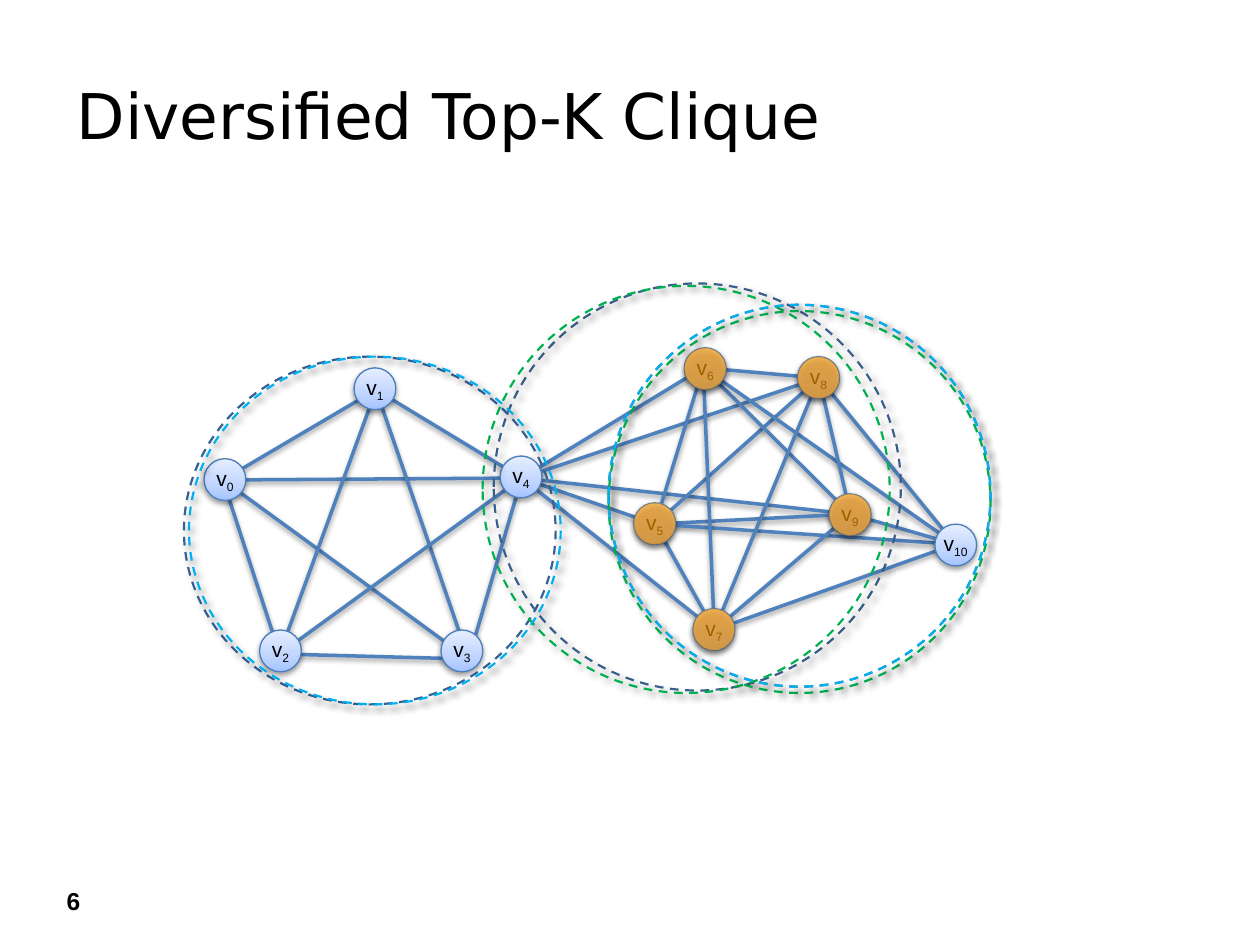
from copy import deepcopy
from itertools import combinations

from lxml.etree import SubElement
from pptx import Presentation
from pptx.dml.color import RGBColor
from pptx.enum.dml import MSO_LINE
from pptx.enum.shapes import MSO_CONNECTOR, MSO_SHAPE
from pptx.enum.text import MSO_ANCHOR, PP_ALIGN
from pptx.oxml.ns import qn
from pptx.util import Pt

BLACK = RGBColor(0x00, 0x00, 0x00)
EDGE_BLUE = RGBColor(0x4F, 0x81, 0xBD)
RIM_BLUE = RGBColor(0x4B, 0x7E, 0xBC)
NAVY = RGBColor(0x37, 0x60, 0x92)
SLATE = RGBColor(0x3A, 0x5F, 0x8C)
GREEN = RGBColor(0x00, 0xB0, 0x50)
CYAN = RGBColor(0x00, 0xB0, 0xF0)
ORANGE = RGBColor(0xFF, 0x99, 0x00)
VERTEX_SHADES = [
    (0, RGBColor(0xA4, 0xC4, 0xFF)),
    (0.35, RGBColor(0xBF, 0xD4, 0xFF)),
    (1, RGBColor(0xE6, 0xEE, 0xFF)),
]

# Blur, distance, direction in degrees, opacity in percent
SOFT_SHADOW = (3.1, 1.6, 90, 38)
RING_SHADOW = (4, 3, 45, 40)
DIAMETER = 23.9

# Vertex number: left and top of its disc, then the point where its edges meet
VERTICES = {
    0: (116.6, 262.1, 127.4, 274.3),
    1: (202.3, 210.2, 214.9, 222.8),
    2: (148.3, 360, 159.8, 373.7),
    3: (252, 360, 267.8, 376.6),
    4: (285.8, 260.6, 298.1, 273.2),
    5: (362.2, 287.3, 374.4, 299.5),
    6: (391, 198.7, 401.8, 210.2),
    7: (396, 347.8, 408.2, 360),
    8: (455.8, 203.8, 468, 216),
    9: (473.8, 282.2, 486, 293.8),
    10: (534.2, 299.5, 545.8, 311),
}
CLIQUES = [range(0, 5), range(4, 10), range(5, 11)]
COVERED = range(5, 10)

# Dashed rings around the cliques: left, top, width, height, colour
RINGS = [
    (105.1, 203.8, 212.4, 198.7, NAVY),
    (282.2, 162, 232.6, 232.6, SLATE),
    (347.8, 174.2, 218.2, 218.2, SLATE),
    (275.8, 163.4, 232.6, 232.6, GREEN),
    (347.8, 177.8, 218.2, 218.2, GREEN),
    (108, 203.8, 212.4, 198.7, CYAN),
    (347.8, 174.2, 218.2, 218.2, CYAN),
]


def cast_shadow(part, blur, distance, direction, opacity):
    effects = SubElement(part._element.spPr, qn("a:effectLst"))
    outer = SubElement(effects, qn("a:outerShdw"), blurRad=str(Pt(blur)),
                       dist=str(Pt(distance)), dir=str(direction * 60000),
                       rotWithShape="0")
    colour = SubElement(outer, qn("a:srgbClr"), val=str(BLACK))
    SubElement(colour, qn("a:alpha"), val=str(opacity * 1000))


def add_label(left, top, width, height, text, size, font, bold=False):
    box = slide.shapes.add_textbox(Pt(left), Pt(top), Pt(width), Pt(height))
    box.text_frame.word_wrap = True
    run = box.text_frame.paragraphs[0].add_run()
    run.text = text
    run.font.size, run.font.name, run.font.bold = Pt(size), font, bold
    run.font.color.rgb = BLACK
    return box


deck = Presentation()
deck.slide_width, deck.slide_height = Pt(720), Pt(540)
slide = deck.slides.add_slide(deck.slide_layouts[6])

# Page number and title
add_label(31, 502.6, 34, 24.5, "6", 14, "Arial", bold=True)
title = add_label(36.7, 36.7, 720, 62.6, "Diversified Top-K Clique", 36, "DejaVu Sans")
title.text_frame.margin_top = Pt(7)

# Edges: every pair inside a clique, each drawn once
pairs = {pair for clique in CLIQUES for pair in combinations(clique, 2)}
for start, end in sorted(pairs):
    ends = VERTICES[start][2:] + VERTICES[end][2:]
    edge = slide.shapes.add_connector(MSO_CONNECTOR.STRAIGHT, *map(Pt, ends))
    edge.line.color.rgb = EDGE_BLUE
    edge.line.width = Pt(2)
    cast_shadow(edge, *SOFT_SHADOW)

# Vertices
for number, (left, top, *_) in VERTICES.items():
    vertex = slide.shapes.add_shape(MSO_SHAPE.FLOWCHART_CONNECTOR, Pt(left), Pt(top),
                                    Pt(DIAMETER), Pt(DIAMETER))
    vertex.fill.gradient()
    vertex.fill.gradient_angle = 90
    stops = vertex._element.spPr.find(".//" + qn("a:gsLst"))
    stops.insert(1, deepcopy(stops[0]))
    for stop, (position, shade) in zip(vertex.fill.gradient_stops, VERTEX_SHADES):
        stop.position = position
        stop.color.rgb = shade
    vertex.line.color.rgb = RIM_BLUE
    vertex.line.width = Pt(0.75)
    cast_shadow(vertex, *SOFT_SHADOW)

    frame = vertex.text_frame
    frame.margin_left = frame.margin_right = frame.margin_top = frame.margin_bottom = 0
    frame.vertical_anchor = MSO_ANCHOR.MIDDLE
    frame.paragraphs[0].alignment = PP_ALIGN.CENTER
    for text in ("v", str(number)):
        run = frame.paragraphs[0].add_run()
        run.text = text
        run.font.size, run.font.name = Pt(12), "Arial"
        run.font.color.rgb = BLACK
    run.font._element.set("baseline", "-25000")

# Clique rings
for *place, colour in RINGS:
    ring = slide.shapes.add_shape(MSO_SHAPE.OVAL, *map(Pt, place))
    ring.fill.background()
    ring.line.color.rgb = colour
    ring.line.width = Pt(1.25)
    ring.line.dash_style = MSO_LINE.DASH
    cast_shadow(ring, *RING_SHADOW)

# Translucent discs over the vertices covered twice
for number in COVERED:
    left, top, *_ = VERTICES[number]
    cover = slide.shapes.add_shape(MSO_SHAPE.FLOWCHART_CONNECTOR, Pt(left), Pt(top),
                                   Pt(DIAMETER), Pt(DIAMETER))
    cover.fill.solid()
    cover.fill.fore_color.rgb = ORANGE
    tint = cover._element.spPr.find(".//" + qn("a:srgbClr"))
    SubElement(tint, qn("a:alpha"), val="63000")
    cover.line.fill.background()
    cast_shadow(cover, *SOFT_SHADOW)

deck.save("out.pptx")
